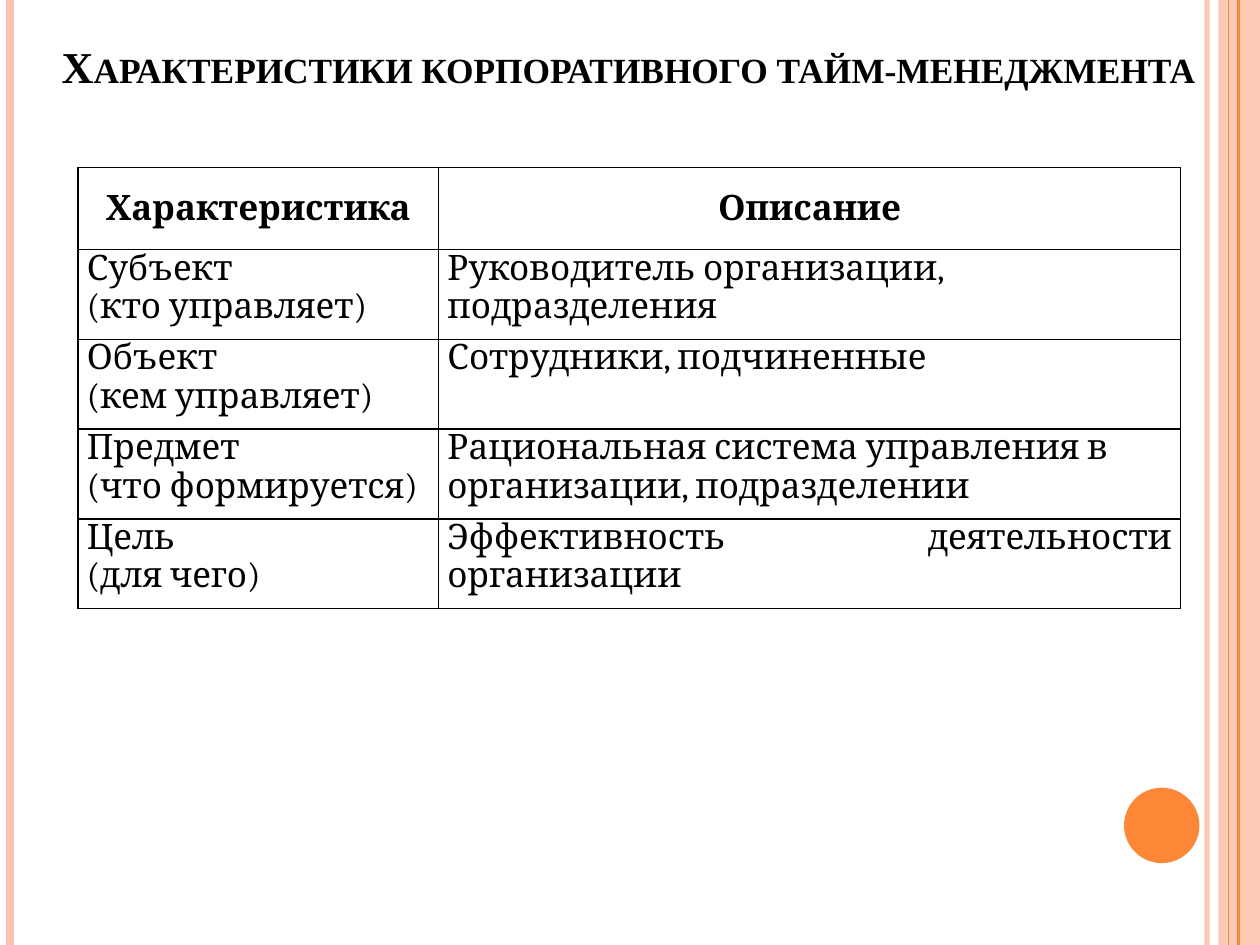
from lxml import etree
from pptx import Presentation
from pptx.dml.color import RGBColor
from pptx.enum.shapes import MSO_CONNECTOR, MSO_SHAPE
from pptx.enum.text import MSO_ANCHOR, MSO_AUTO_SIZE, PP_ALIGN
from pptx.oxml.ns import qn
from pptx.util import Cm, Pt

STRAIGHT = MSO_CONNECTOR.STRAIGHT
RECTANGLE, OVAL = MSO_SHAPE.RECTANGLE, MSO_SHAPE.OVAL
TOP, MIDDLE, BOTTOM = MSO_ANCHOR.TOP, MSO_ANCHOR.MIDDLE, MSO_ANCHOR.BOTTOM
LEFT, CENTER, JUSTIFY = PP_ALIGN.LEFT, PP_ALIGN.CENTER, PP_ALIGN.JUSTIFY
NO_AUTOFIT = MSO_AUTO_SIZE.NONE

# Content
TITLE = "Характеристики корпоративного тайм-менеджмента"
HEADERS = ["Характеристика", "Описание"]
ROWS = [  # characteristic lines, description, description alignment
    (["Субъект", "(кто управляет)"], "Руководитель организации, подразделения", LEFT),
    (["Объект", "(кем управляет)"], "Сотрудники, подчиненные", JUSTIFY),
    (["Предмет", "(что формируется)"],
     "Рациональная система управления в организации, подразделении", LEFT),
    (["Цель", "(для чего)"], "Эффективность деятельности организации", JUSTIFY),
]

# Theme and layout (centimetres)
THEME = {
    "peach": "FEC3AE", "orange": "FE8637", "ink": "000000",
    "title_font": "Times New Roman", "title_size": 25.2,
    "table_font": "Cambria", "table_size": 20, "border": 1,
}
SLIDE_W, SLIDE_H = 25.4, 19.05
STRIPES = [  # x, colour, width in points, opacity in percent
    (24.33, "peach", 3, 93),
    (0.2, "peach", 4.5, 100),
    (24.97, "orange", 1.5, 100),
    (24.77, "orange", 0.75, 100),
]
BAND_X, BAND_OPACITY = 24.56, 87
DOT_X, DOT_Y, DOT_SIZE = 22.66, 15.88, 1.52
TITLE_BOX = (0.99, 0.2, 23.42, 1.78)
TABLE_X, TABLE_Y = 1.57, 3.38
COLUMN_WIDTHS = [7.27, 14.96]
HEADER_H, ROW_H = 1.65, 1.81
CELL_INSET = 0.18


def color(name):
    return RGBColor.from_string(THEME[name])


def set_opacity(part, percent):
    for srgb in part.iter(qn("a:srgbClr")):
        etree.SubElement(srgb, qn("a:alpha"), val=str(percent * 1000))


def add_stripe(slide, x, color_name, width, opacity):
    stripe = slide.shapes.add_connector(STRAIGHT, Cm(x), 0, Cm(x), Cm(SLIDE_H))
    stripe.line.color.rgb = color(color_name)
    stripe.line.width = Pt(width)
    properties = stripe._element.spPr
    etree.SubElement(properties, qn("a:effectLst"))
    if opacity < 100:
        set_opacity(properties, opacity)


def add_plain_shape(slide, kind, box, color_name):
    shape = slide.shapes.add_shape(kind, *map(Cm, box))
    shape.shadow.inherit = False
    shape.fill.solid()
    shape.fill.fore_color.rgb = color(color_name)
    shape.line.fill.background()
    return shape


def add_run(paragraph, text, role, bold):
    run = paragraph.add_run()
    run.text = text
    run.font.name = THEME[f"{role}_font"]
    run.font.size = Pt(THEME[f"{role}_size"])
    run.font.bold = bold
    run.font.color.rgb = color("ink")
    return run


def fill_cell(cell, lines, align, anchor=TOP, bold=False):
    cell.margin_left = cell.margin_right = Cm(CELL_INSET)
    cell.margin_top = cell.margin_bottom = 0
    cell.vertical_anchor = anchor
    properties = cell._tc.get_or_add_tcPr()
    for side in ("lnL", "lnR", "lnT", "lnB"):
        border = etree.SubElement(properties, qn(f"a:{side}"),
                                  w=str(Pt(THEME["border"])))
        solid = etree.SubElement(border, qn("a:solidFill"))
        etree.SubElement(solid, qn("a:srgbClr"), val=THEME["ink"])
    cell.fill.background()
    frame = cell.text_frame
    for index, line in enumerate(lines):
        paragraph = frame.add_paragraph() if index else frame.paragraphs[0]
        paragraph.alignment = align
        paragraph.line_spacing = 0.95
        add_run(paragraph, line, "table", bold)


def add_title(slide):
    title = slide.shapes.title
    title.left, title.top, title.width, title.height = map(Cm, TITLE_BOX)
    frame = title.text_frame
    frame.word_wrap = True
    frame.auto_size = NO_AUTOFIT
    frame.vertical_anchor = BOTTOM
    frame.margin_right = 0
    paragraph = frame.paragraphs[0]
    paragraph.alignment = LEFT
    run = add_run(paragraph, TITLE, "title", True)
    run._r.get_or_add_rPr().set("cap", "small")


def add_characteristics(slide):
    height = HEADER_H + ROW_H * len(ROWS)
    table = slide.shapes.add_table(
        len(ROWS) + 1, len(HEADERS), Cm(TABLE_X), Cm(TABLE_Y),
        Cm(sum(COLUMN_WIDTHS)), Cm(height)).table
    table.horz_banding = False
    for column, width in zip(table.columns, COLUMN_WIDTHS):
        column.width = Cm(width)
    for index, row in enumerate(table.rows):
        row.height = Cm(ROW_H if index else HEADER_H)
    for index, header in enumerate(HEADERS):
        fill_cell(table.cell(0, index), [header], CENTER, MIDDLE, bold=True)
    for index, (characteristic, description, align) in enumerate(ROWS, start=1):
        fill_cell(table.cell(index, 0), characteristic, JUSTIFY)
        fill_cell(table.cell(index, 1), [description], align)


def main():
    deck = Presentation()
    deck.slide_width, deck.slide_height = Cm(SLIDE_W), Cm(SLIDE_H)
    slide = deck.slides.add_slide(deck.slide_layouts[5])

    # Side decoration
    band = add_plain_shape(slide, RECTANGLE,
                           (BAND_X, 0, SLIDE_W - BAND_X, SLIDE_H), "peach")
    set_opacity(band._element.spPr, BAND_OPACITY)
    for stripe in STRIPES:
        add_stripe(slide, *stripe)
    add_plain_shape(slide, OVAL, (DOT_X, DOT_Y, DOT_SIZE, DOT_SIZE), "orange")

    # Title and table
    add_title(slide)
    add_characteristics(slide)
    deck.save("out.pptx")


if __name__ == "__main__":
    main()
